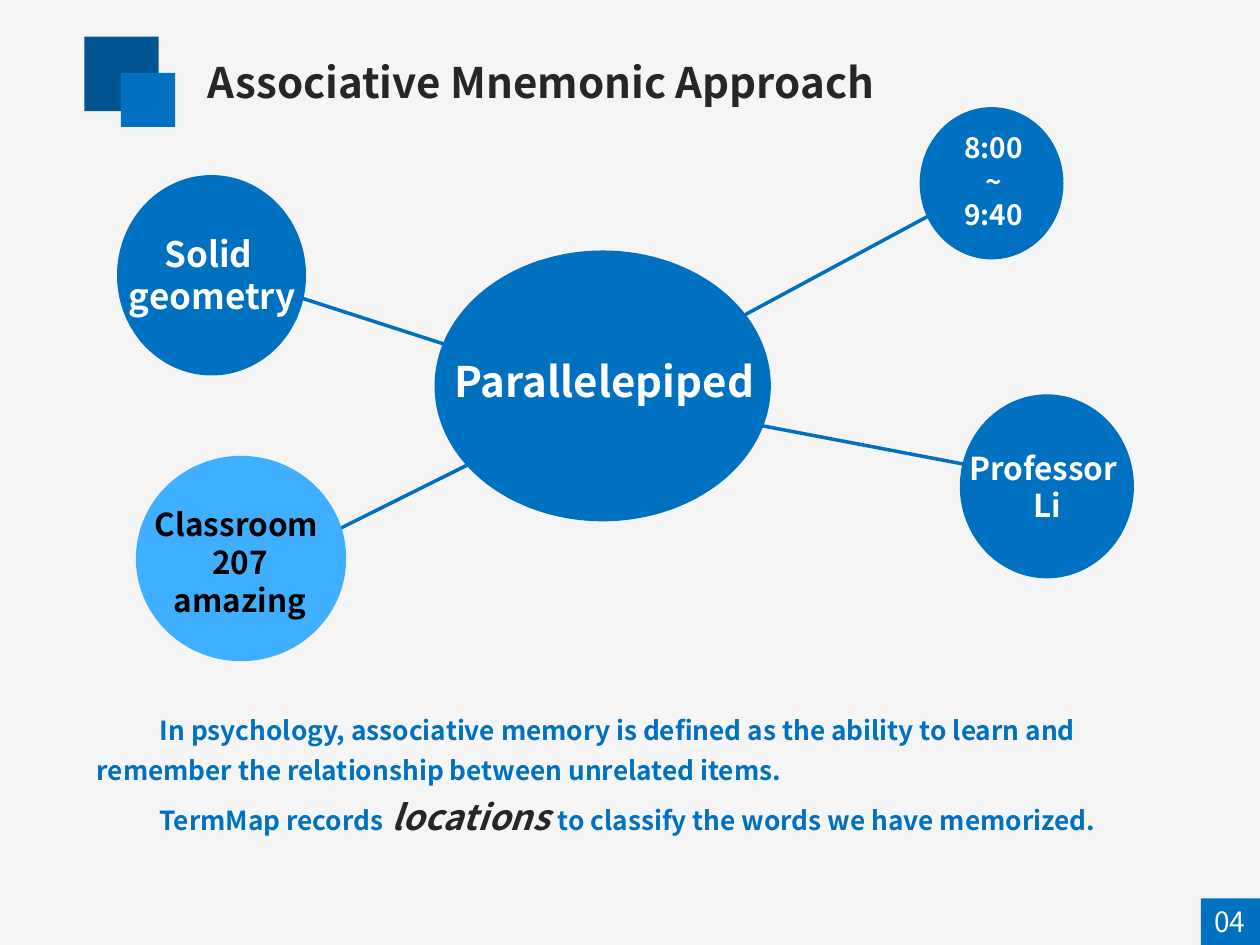
from dataclasses import dataclass

from lxml.etree import SubElement
from pptx import Presentation
from pptx.dml.color import RGBColor
from pptx.enum.shapes import MSO_CONNECTOR as Link, MSO_SHAPE as Form
from pptx.enum.text import MSO_AUTO_SIZE as Fit, PP_ALIGN as Align
from pptx.oxml.ns import qn
from pptx.util import Cm, Pt


@dataclass(frozen=True)
class Theme:
    font: str = "Noto Sans CJK SC"
    paper: str = "F5F5F5"
    blue: str = "0070C0"
    navy: str = "005490"
    sky: str = "40AFFF"
    dark: str = "262626"
    white: str = "FFFFFF"
    black: str = "000000"
    heading: int = 24
    large: int = 20
    medium: int = 18
    small: int = 16
    body: int = 15
    line: int = 2


class SlideMaker:
    def __init__(self, slide, theme):
        self.slide = slide
        self.theme = theme
        slide.background.fill.solid()
        slide.background.fill.fore_color.rgb = RGBColor.from_string(theme.paper)

    def shape(self, form, place, color):
        shape = self.slide.shapes.add_shape(form, *map(Cm, place))
        shape.shadow.inherit = False
        shape.fill.solid()
        shape.fill.fore_color.rgb = RGBColor.from_string(color)
        shape.line.fill.background()

    def line(self, start, end):
        line = self.slide.shapes.add_connector(Link.STRAIGHT, *map(Cm, start + end))
        line.line.width = Pt(self.theme.line)
        line.line.color.rgb = RGBColor.from_string(self.theme.blue)
        SubElement(line._element.spPr, qn("a:effectLst"))

    def text(self, place, paragraphs, size, color, bold=True, indent=0, **para_format):
        box = self.slide.shapes.add_textbox(*map(Cm, place))
        frame = box.text_frame
        frame.word_wrap = True
        frame.auto_size = Fit.SHAPE_TO_FIT_TEXT
        for index, spans in enumerate(paragraphs):
            para = frame.paragraphs[0] if index == 0 else frame.add_paragraph()
            for name, value in para_format.items():
                setattr(para, name, value)
            if indent:
                para._p.get_or_add_pPr().set("indent", str(Cm(indent)))
            for words, changes in spans:
                look = {"size": size, "color": color, "bold": bold} | changes
                span = para.add_run()
                span.text = words
                span.font.color.rgb = RGBColor.from_string(look.pop("color"))
                look |= {"size": Pt(look["size"]), "name": self.theme.font}
                for name, value in look.items():
                    setattr(span.font, name, value)

    def label(self, place, lines, size, color, bold=True):
        paragraphs = [[(words, {})] for words in lines]
        self.text(place, paragraphs, size, color, bold, alignment=Align.CENTER)

    def bubble(self, oval, place, lines, size, fill, color):
        self.shape(Form.OVAL, oval, fill)
        self.label(place, lines, size, color)


def main():
    deck = Presentation()
    deck.slide_width, deck.slide_height = Cm(25.4), Cm(19.05)
    theme = Theme()
    page = SlideMaker(deck.slides.add_slide(deck.slide_layouts[6]), theme)

    page.shape(Form.RECTANGLE, (1.7, 0.74, 1.5, 1.5), theme.navy)
    page.shape(Form.RECTANGLE, (2.44, 1.47, 1.09, 1.09), theme.blue)
    page.text((3.94, 1.02, 19.76, 1.27), [[("Associative Mnemonic Approach", {})]],
              theme.heading, theme.dark)

    for start, end in (
        ((4.32, 5.44), (12.09, 7.95)),
        ((6.68, 10.74), (12.12, 8.03)),
        ((11.89, 8.03), (19.3, 4.04)),
        ((12.04, 7.95), (21.23, 9.7)),
    ):
        page.line(start, end)

    definition = ("In psychology, associative memory is defined as the ability to learn "
                  "and remember the relationship between unrelated items.")
    emphasis = {"size": theme.large, "color": theme.dark, "italic": True}
    page.text((1.7, 14.12, 21.92, 2.92), [
        [(definition, {})],
        [("TermMap records", {}), (" ", {"size": theme.large}),
         ("locations ", emphasis), ("to classify the words we have memorized.", {})],
    ], theme.body, theme.blue, indent=1.27, line_spacing=1.25)

    page.shape(Form.RECTANGLE, (24.21, 18.11, 1.19, 0.94), theme.blue)
    page.label((23.9, 18.11, 1.78, 0.94), ["04"], theme.small, theme.white, bold=False)

    for oval, place, lines, size, fill, color in (
        ((8.76, 5.05, 6.78, 5.46), (8.79, 7.04, 6.78, 2.31),
         ["Parallelepiped"], theme.heading, theme.blue, theme.white),
        ((18.54, 2.16, 2.9, 3.07), (17.86, 2.51, 4.34, 3),
         ["8:00", "~", "9:40"], theme.small, theme.blue, theme.white),
        ((2.36, 3.53, 3.81, 4.04), (1.42, 4.57, 5.72, 1.96),
         ["Solid ", "geometry"], theme.large, theme.blue, theme.white),
        ((19.35, 7.95, 3.51, 3.71), (18.49, 8.92, 5.23, 1.8),
         ["Professor ", "Li"], theme.medium, theme.blue, theme.white),
        ((2.74, 9.19, 4.24, 4.14), (2.16, 10.06, 5.36, 2.57),
         ["Classroom ", "207", "amazing"], theme.medium, theme.sky, theme.black),
    ):
        page.bubble(oval, place, lines, size, fill, color)

    deck.save("out.pptx")


if __name__ == "__main__":
    main()
